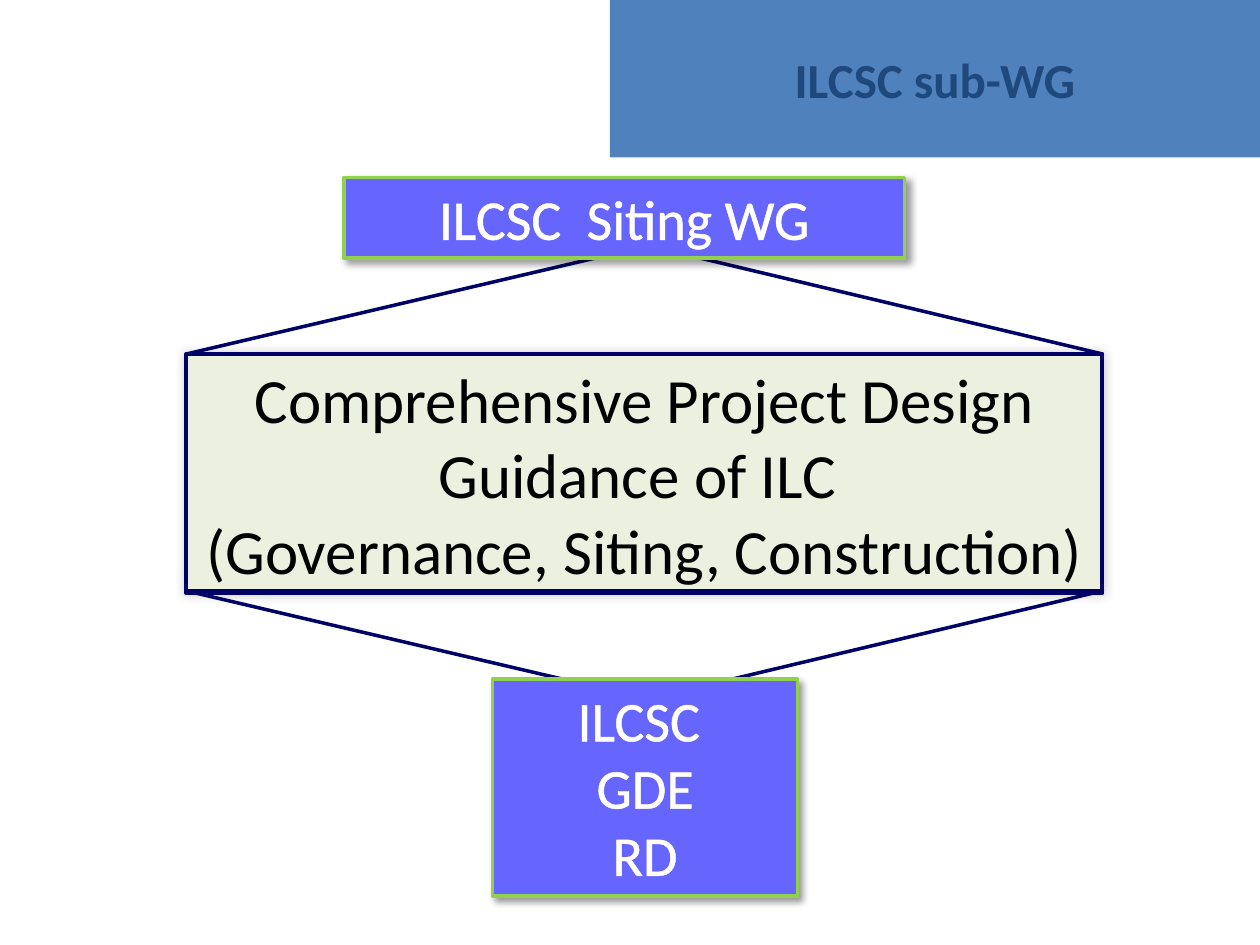
from dataclasses import dataclass

from lxml import etree
from pptx import Presentation
from pptx.dml.color import RGBColor
from pptx.enum.shapes import MSO_SHAPE
from pptx.enum.text import MSO_ANCHOR, MSO_AUTO_SIZE, PP_ALIGN
from pptx.oxml.ns import qn
from pptx.util import Emu, Pt

RECTANGLE = MSO_SHAPE.RECTANGLE
TRIANGLE = MSO_SHAPE.ISOSCELES_TRIANGLE
TOP, MIDDLE = MSO_ANCHOR.TOP, MSO_ANCHOR.MIDDLE
CENTER = PP_ALIGN.CENTER
FIT_TEXT = MSO_AUTO_SIZE.SHAPE_TO_FIT_TEXT

EMU_PER_PX = 9144  # 100 px to the inch
EMU_PER_POINT = 12700
ANGLE_UNIT = 60000


@dataclass(frozen=True)
class Theme:
    font: str = "Calibri"
    banner: str = "4F81BD"
    title: str = "1F497D"
    guidance: str = "EBF1DE"
    navy: str = "000066"
    group: str = "6666FF"
    green: str = "92D050"
    white: str = "FFFFFF"
    black: str = "000000"
    title_size: int = 28
    group_size: int = 32
    guidance_size: int = 36
    text_outline: float = 1.45
    # opacity in percent, blur and distance in points, direction in degrees
    soft_shadow: tuple = (20, 6, 0, 315)
    drop_shadow: tuple = (40, 4, 3, 45)


def add_solid_fill(parent, color):
    fill = etree.SubElement(parent, qn("a:solidFill"))
    return etree.SubElement(fill, qn("a:srgbClr"), val=color)


class SlideBuilder:
    def __init__(self, slide, theme):
        self.slide = slide
        self.theme = theme

    def shape(self, kind, box, fill=None, line=None, line_width=2):
        shape = self.slide.shapes.add_shape(kind, *(Emu(px * EMU_PER_PX) for px in box))
        shape.shadow.inherit = False
        if fill:
            shape.fill.solid()
            shape.fill.fore_color.rgb = RGBColor.from_string(fill)
        else:
            shape.fill.background()
        if line:
            shape.line.color.rgb = RGBColor.from_string(line)
            shape.line.width = Pt(line_width)
        else:
            shape.line.fill.background()
        return shape

    def shadow(self, shape, opacity, blur, distance, direction):
        effects = shape._element.spPr.find(qn("a:effectLst"))
        shadow = etree.SubElement(
            effects, qn("a:outerShdw"), blurRad=str(blur * EMU_PER_POINT),
            dist=str(distance * EMU_PER_POINT), dir=str(direction * ANGLE_UNIT),
            rotWithShape="0")
        color = etree.SubElement(shadow, qn("a:srgbClr"), val=self.theme.black)
        etree.SubElement(color, qn("a:alpha"), val=str(opacity * 1000))

    def text(self, shape, text, size, color, anchor=TOP, bold=False):
        frame = shape.text_frame
        frame.word_wrap = True
        frame.vertical_anchor = anchor
        frame.text = text
        for paragraph in frame.paragraphs:
            paragraph.alignment = CENTER
            for run in paragraph.runs:
                run.font.name = self.theme.font
                run.font.size = Pt(size)
                run.font.bold = bold
                run.font.color.rgb = RGBColor.from_string(color)

    def outline_text(self, shape, color):
        for paragraph in shape.text_frame.paragraphs:
            for run in paragraph.runs:
                width = str(int(Pt(self.theme.text_outline)))
                line = etree.Element(qn("a:ln"), w=width)
                add_solid_fill(line, color)
                run.font._element.insert(0, line)

    def banner(self, box, text):
        theme = self.theme
        shape = self.shape(RECTANGLE, box, theme.banner)
        self.text(shape, text, theme.title_size, theme.title, MIDDLE, bold=True)

    def guidance_box(self, box, text):
        theme = self.theme
        shape = self.shape(RECTANGLE, box, theme.guidance, theme.navy, 2.25)
        self.shadow(shape, *theme.soft_shadow)
        self.text(shape, text, theme.guidance_size, theme.black)

    def funnel(self, box, pointing_down=False):
        """Open triangle that ties the guidance box to a group."""
        shape = self.shape(TRIANGLE, box, line=self.theme.navy)
        shape.adjustments[0] = 0.504
        if pointing_down:
            shape._element.spPr.find(qn("a:xfrm")).set("flipV", "1")

    def group_box(self, box, text):
        theme = self.theme
        shape = self.shape(RECTANGLE, box, theme.group, theme.green)
        self.shadow(shape, *theme.drop_shadow)
        self.text(shape, text, theme.group_size, theme.white)
        self.outline_text(shape, theme.white)
        shape.text_frame.auto_size = FIT_TEXT


def main():
    presentation = Presentation()
    presentation.slide_width = Emu(1000 * EMU_PER_PX)
    presentation.slide_height = Emu(750 * EMU_PER_PX)
    slide = presentation.slides.add_slide(presentation.slide_layouts[6])
    builder = SlideBuilder(slide, Theme())

    left, width, funnel_height = 148, 727, 86
    builder.banner((484, 0, 516, 125), "ILCSC sub-WG")
    builder.guidance_box(
        (left, 281, width, 190),
        "Comprehensive Project Design Guidance of ILC \v(Governance, Siting, Construction)")
    builder.funnel((left, 195, width, funnel_height))
    builder.group_box((273, 141, 445, 64), "ILCSC  Siting WG")
    builder.funnel((left, 469, width, funnel_height), pointing_down=True)
    builder.group_box((391, 539, 242, 172), "ILCSC \nGDE\nRD")
    presentation.save("out.pptx")


if __name__ == "__main__":
    main()
